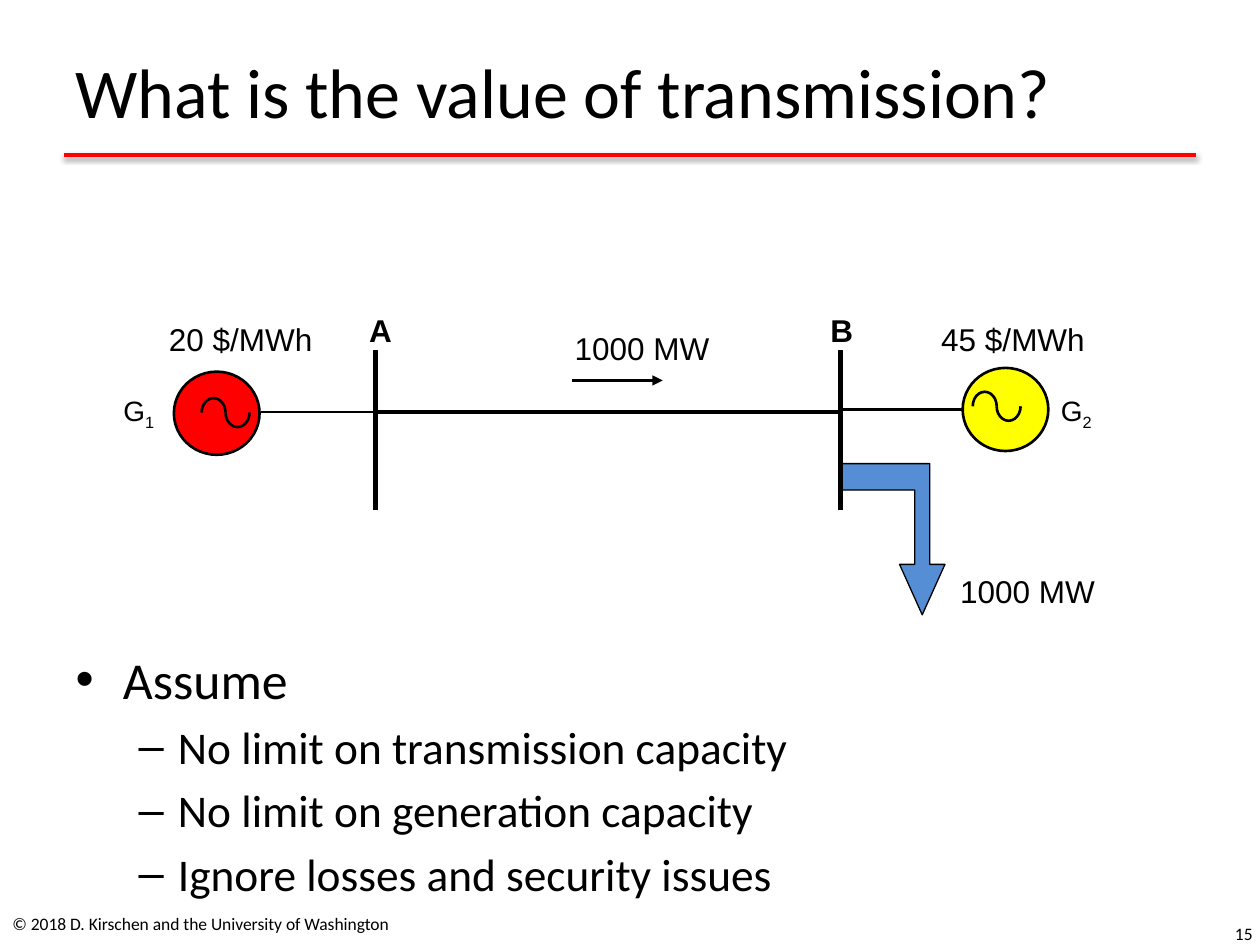
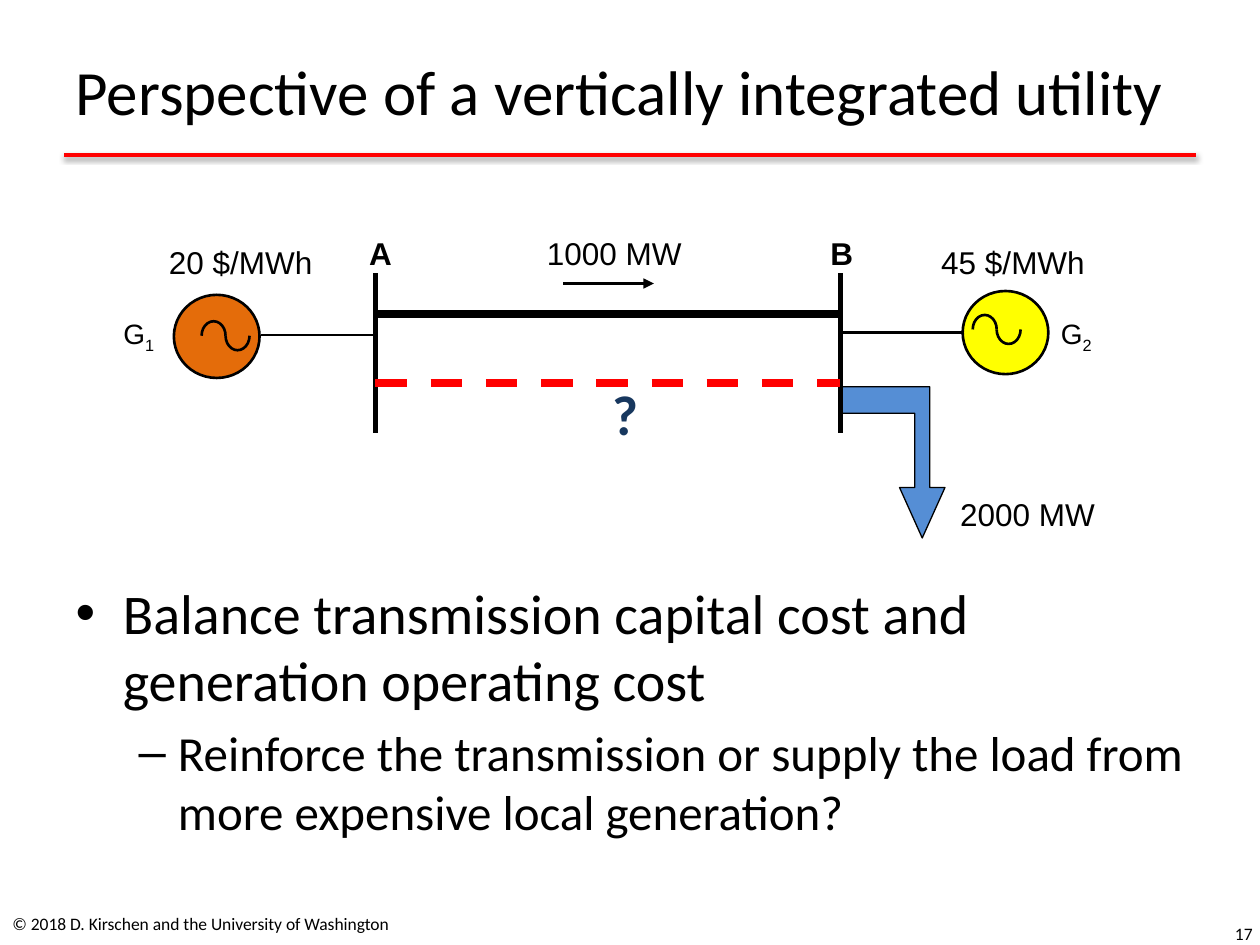
from lxml.etree import SubElement
from pptx import Presentation
from pptx.dml.color import RGBColor
from pptx.enum.dml import MSO_LINE_DASH_STYLE as Dash
from pptx.enum.shapes import MSO_CONNECTOR as Connector, MSO_SHAPE as Shape
from pptx.enum.text import MSO_ANCHOR as Anchor, MSO_AUTO_SIZE as AutoSize, PP_ALIGN as Align
from pptx.oxml.ns import qn
from pptx.util import Emu, Inches, Pt

BLACK = RGBColor(0x00, 0x00, 0x00)
RED = RGBColor(0xFF, 0x00, 0x00)
ORANGE = RGBColor(0xE4, 0x6C, 0x0A)
YELLOW = RGBColor(0xFF, 0xFF, 0x00)
LOAD_BLUE = RGBColor(0x55, 0x8E, 0xD5)
NAVY = RGBColor(0x17, 0x37, 0x5E)
TEXT_FONT, DIAGRAM_FONT = "Calibri", "Arial"

# Grid of square cells: 10 columns by 7.5 rows
SLIDE_WIDTH, SLIDE_HEIGHT = Inches(10), Inches(7.5)
CELL = SLIDE_WIDTH // 10
BUS_A, BUS_B, BUS_HEIGHT = 2.98, 6.67, 1.27
LABEL_WIDTH, LABEL_HEIGHT, LETTER_WIDTH = 1.21, 0.49, 0.28

# Generators: number, price, circle left and top, wave offset, wire, name and price left
GENERATORS = [
    ("1", "20 $/MWh", 1.38, 0.17, (0.22, 0.21), (2.07, BUS_A, 0.49), 0.98, 1.34),
    ("2", "45 $/MWh", 7.64, 0.14, (0.08, 0.19), (BUS_B, 7.64, 0.47), 8.42, 7.47),
]
# Load arrow outline, from its tip, relative to the top of bus B
LOAD_OUTLINE = [(0.65, 2.1), (0.47, 1.7), (0.59, 1.7), (0.59, 1.11), (0, 1.11),
                (0, 0.9), (0.71, 0.9), (0.71, 1.7), (0.83, 1.7)]

# All tops inside a diagram are rows below its top
SLIDES = [
    dict(title="What is the value of transmission?", title_size=40, number="15",
         body_top=5.09, sizes=(29.6, 25.9),
         items=[(0, "Assume"), (1, "No limit on transmission capacity"),
                (1, "No limit on generation capacity"),
                (1, "Ignore losses and security issues")],
         top=2.78, generator_1=RED, load="1000 MW", link_top=0.49, link_weight=2.25,
         flow_left=4.54, flow_top=0.24, flow_label=(4.56, -0.17), new_link=False),
    dict(title="Perspective of a vertically integrated utility", title_size=36, number="17",
         body_top=4.54, sizes=(32, 28),
         items=[(0, "Balance transmission capital cost and generation operating cost"),
                (1, "Reinforce the transmission or supply the load from more expensive "
                    "local generation?")],
         top=2.17, generator_1=ORANGE, load="2000 MW", link_top=0.32, link_weight=4.5,
         flow_left=4.47, flow_top=0.08, flow_label=(4.34, -0.31), new_link=True),
]


def add_line(slide, start, end, weight, color=BLACK):
    points = [Emu(int(value * CELL)) for value in (*start, *end)]
    line = slide.shapes.add_connector(Connector.STRAIGHT, *points)
    line.line.color.rgb = color
    line.line.width = Pt(weight)
    effects = SubElement(line._element.spPr, qn("a:effectLst"))
    return line, effects


def add_label(slide, text, left, top, width=LABEL_WIDTH, height=LABEL_HEIGHT, size=18,
              font=DIAGRAM_FONT, color=BLACK, bold=False, align=Align.LEFT,
              anchor=Anchor.TOP, inset=(0, 0), subscript=""):
    box = slide.shapes.add_textbox(*[Emu(int(value * CELL)) for value in (left, top, width, height)])
    frame = box.text_frame
    frame.word_wrap = True
    frame.vertical_anchor = anchor
    frame.margin_left = frame.margin_right = Inches(inset[0])
    frame.margin_top = frame.margin_bottom = Inches(inset[1])
    paragraph = frame.paragraphs[0]
    paragraph.text = text
    paragraph.alignment = align
    if subscript:
        run = paragraph.add_run()
        run.text = subscript
        run._r.get_or_add_rPr().set("baseline", "-25000")
    for run in paragraph.runs:
        run.font.name, run.font.size, run.font.bold = font, Pt(size), bold
        run.font.color.rgb = color
    return frame


presentation = Presentation()
presentation.slide_width, presentation.slide_height = SLIDE_WIDTH, SLIDE_HEIGHT

for content in SLIDES:
    slide = presentation.slides.add_slide(presentation.slide_layouts[1])
    top = content["top"]

    # Title rule with a soft shadow
    rule, effects = add_line(slide, (0.51, 1.23), (9.49, 1.23), 2, RED)
    shadow = SubElement(effects, qn("a:outerShdw"), blurRad="40000", dist="20000",
                        dir="5400000", rotWithShape="0")
    shadow_color = SubElement(shadow, qn("a:srgbClr"), val="000000")
    SubElement(shadow_color, qn("a:alpha"), val="38000")

    # Title and list
    title, body = slide.shapes.title, slide.placeholders[1]
    for holder, holder_top, height in ((title, 0.13, 1.17),
                                       (body, content["body_top"], 6.98 - content["body_top"])):
        holder.left, holder.width = int(0.5 * CELL), 9 * CELL
        holder.top, holder.height = int(holder_top * CELL), int(height * CELL)
        holder.text_frame.auto_size = AutoSize.NONE
    title.text_frame.text = content["title"]
    title.text_frame.vertical_anchor = Anchor.MIDDLE
    title.text_frame.paragraphs[0].alignment = Align.LEFT
    body.text_frame.text = "\n".join(text for level, text in content["items"])
    sizes = [content["title_size"]]
    for paragraph, (level, text) in zip(body.text_frame.paragraphs, content["items"]):
        paragraph.level = level
        sizes.append(content["sizes"][level])
    for paragraph, size in zip((*title.text_frame.paragraphs, *body.text_frame.paragraphs), sizes):
        font = paragraph.runs[0].font
        font.name, font.size, font.color.rgb = TEXT_FONT, Pt(size), BLACK

    # Footer and slide number
    for text, left, footer_top, width, align in (
            ("© 2018 D. Kirschen and the University of Washington", 0, 7.13, 3.27, Align.LEFT),
            (content["number"], 7.71, 7.21, 2.33, Align.RIGHT)):
        add_label(slide, text, left, footer_top, width, 0.4, 10, TEXT_FONT, align=align,
                  anchor=Anchor.MIDDLE, inset=(0.1, 0.05))

    # Load arrow
    outline = [((BUS_B + x) * CELL, (top + y) * CELL) for x, y in LOAD_OUTLINE]
    builder = slide.shapes.build_freeform(*[int(value) for value in outline[0]])
    builder.add_line_segments([(int(x), int(y)) for x, y in outline[1:]], close=True)
    load_arrow = builder.convert_to_shape()
    load_arrow.shadow.inherit = False
    load_arrow.fill.solid()
    load_arrow.fill.fore_color.rgb = LOAD_BLUE
    load_arrow.line.color.rgb = BLACK
    load_arrow.line.width = Pt(0.75)
    add_label(slide, content["load"], 7.62, top + 1.76)

    # Generators: circle, sine wave of two half arcs, wire and labels
    for (number, price, left, circle_top, wave, wire, name_left, price_left), color in zip(
            GENERATORS, (content["generator_1"], YELLOW)):
        wave_left, wave_top = left + wave[0], top + circle_top + wave[1]
        for kind, x, y, width, height, angles in (
                (Shape.OVAL, left, top + circle_top, 0.68, 0.66, None),
                (Shape.ARC, wave_left, wave_top, 0.19, 0.23, (108, 0)),
                (Shape.ARC, wave_left + 0.19, wave_top, 0.19, 0.23, (0, 108))):
            shape = slide.shapes.add_shape(
                kind, *[Emu(int(value * CELL)) for value in (x, y, width, height)])
            shape.shadow.inherit = False
            shape.line.color.rgb = BLACK
            shape.line.width = Pt(1.5)
            if angles:
                shape.fill.background()
                shape.adjustments[0], shape.adjustments[1] = angles
            else:
                shape.fill.solid()
                shape.fill.fore_color.rgb = color
        wire_start, wire_end, wire_top = wire
        add_line(slide, (wire_start, top + wire_top), (wire_end, top + wire_top), 1.5)
        add_label(slide, price, price_left, top - 0.24)
        add_label(slide, "G", name_left, top + 0.34, LETTER_WIDTH, size=16, subscript=number)

    # Buses
    for name, bus, label_left in (("A", BUS_A, 2.88), ("B", BUS_B, 6.54)):
        add_line(slide, (bus, top), (bus, top + BUS_HEIGHT), 3)
        add_label(slide, name, label_left, top - 0.31, LETTER_WIDTH, bold=True, align=Align.CENTER)

    # Transmission line and power flow
    link_top, flow_top = top + content["link_top"], top + content["flow_top"]
    add_line(slide, (BUS_A, link_top), (BUS_B, link_top), content["link_weight"])
    flow_left = content["flow_left"]
    flow, effects = add_line(slide, (flow_left, flow_top), (flow_left + 0.72, flow_top), 1.5)
    SubElement(flow.line._get_or_add_ln(), qn("a:tailEnd"), type="triangle")
    flow_label_left, flow_label_top = content["flow_label"]
    add_label(slide, "1000 MW", flow_label_left, top + flow_label_top)

    # Possible reinforcement
    if content["new_link"]:
        new_link, effects = add_line(slide, (BUS_A, top + 0.87), (BUS_B, top + 0.87), 4.5, RED)
        new_link.line.dash_style = Dash.DASH
        question = add_label(slide, "?", 4.76, top + 0.79, 0.41, 0.64, 32, TEXT_FONT, NAVY,
                             bold=True, inset=(0.1, 0.05))
        question.word_wrap = False
        question.auto_size = AutoSize.SHAPE_TO_FIT_TEXT

presentation.save("out.pptx")
